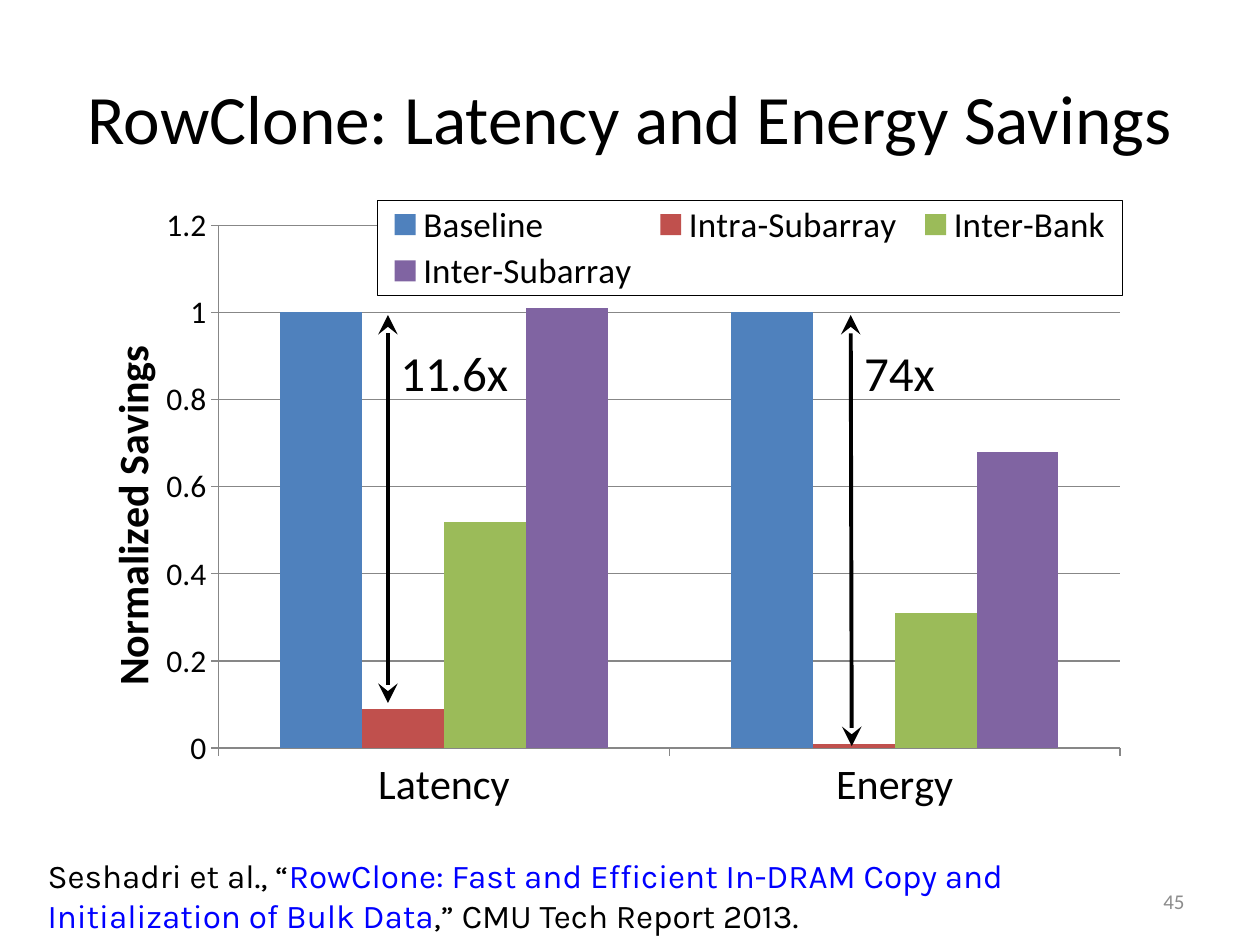
"""Build the RowClone latency and energy savings slide."""
from lxml import etree
from pptx import Presentation
from pptx.chart.data import CategoryChartData
from pptx.dml.color import RGBColor
from pptx.enum.chart import XL_CHART_TYPE, XL_LEGEND_POSITION, XL_TICK_MARK
from pptx.enum.shapes import MSO_CONNECTOR
from pptx.enum.text import MSO_ANCHOR, PP_ALIGN
from pptx.oxml import parse_xml
from pptx.oxml.ns import nsdecls, qn
from pptx.util import Cm, Pt

COLUMNS = XL_CHART_TYPE.COLUMN_CLUSTERED
RIGHT = XL_LEGEND_POSITION.RIGHT
OUTSIDE = XL_TICK_MARK.OUTSIDE
STRAIGHT = MSO_CONNECTOR.STRAIGHT
TOP, MIDDLE = MSO_ANCHOR.TOP, MSO_ANCHOR.MIDDLE
LEFT, CENTER, END = PP_ALIGN.LEFT, PP_ALIGN.CENTER, PP_ALIGN.RIGHT

COLORS = {
    "text": "000000", "link": "0000FF", "number": "8C8C8C", "grid": "878787",
    "Baseline": "4F81BD", "Intra-Subarray": "C0504D",
    "Inter-Bank": "9BBB59", "Inter-Subarray": "8064A2",
}
RGB = {name: RGBColor.from_string(value) for name, value in COLORS.items()}


def add_text(box, runs, size, font="Calibri", align=LEFT, anchor=TOP, wrap=True):
    """Add a text box whose runs are (text, colour name) pairs."""
    tf = s.shapes.add_textbox(*map(Cm, box)).text_frame
    tf.word_wrap, tf.vertical_anchor = wrap, anchor
    p = tf.paragraphs[0]
    p.alignment = align
    for text, color in runs:
        r = p.add_run()
        r.text = text
        r.font.color.rgb = RGB[color]
        for name, value in {"name": font, "size": Pt(size)}.items():
            setattr(r.font, name, value)


def layout_xml(target="", **fractions):
    """Return a manual chart layout placed by fractions of the chart."""
    inner = f'<c:layoutTarget val="{target}"/>' if target else ""
    inner += '<c:xMode val="edge"/><c:yMode val="edge"/>'
    inner += "".join(f'<c:{k} val="{v}"/>' for k, v in fractions.items())
    return parse_xml(f'<c:layout {nsdecls("c")}><c:manualLayout>{inner}'
                     '</c:manualLayout></c:layout>')


prs = Presentation()
prs.slide_width, prs.slide_height = Cm(25.4), Cm(19.05)
s = prs.slides.add_slide(prs.slide_layouts[6])

add_text((1.27, 0.76, 22.86, 3.18),
         [("RowClone: Latency and Energy Savings", "text")],
         39.6, align=CENTER, anchor=MIDDLE)

data = CategoryChartData()
data.categories = ["Latency", "Energy"]
savings = {
    "Baseline": (1, 1),
    "Intra-Subarray": (0.09, 0.01),
    "Inter-Bank": (0.52, 0.31),
    "Inter-Subarray": (1.01, 0.68),
}
for name, values in savings.items():
    data.add_series(name, values)
chart = s.shapes.add_chart(COLUMNS, Cm(1.27), Cm(4.01), Cm(22.43), Cm(13.34),
                           data).chart
chart.has_title = False
chart.font.name, chart.font.size = "Calibri", Pt(10)
chart.font.color.rgb = RGB["text"]

plot = chart.plots[0]
plot.gap_width, plot.overlap, plot.vary_by_categories = 150, 0, False
for series in plot.series:
    series.format.fill.solid()
    series.format.fill.fore_color.rgb = RGB[series.name]
plot_area = chart.element.find(".//" + qn("c:plotArea"))
for old in plot_area.findall(qn("c:layout")):
    plot_area.remove(old)
plot_area.insert(0, layout_xml("inner", x=0.14, y=0.04, w=0.81, h=0.79))

val_axis = chart.value_axis
val_format = {"minimum_scale": 0, "maximum_scale": 1.2, "major_unit": 0.2,
              "has_major_gridlines": True}
for name, value in val_format.items():
    setattr(val_axis, name, value)
for axis, size in ((chart.category_axis, 24), (val_axis, 18)):
    axis.major_tick_mark = OUTSIDE
    axis.tick_labels.font.size = Pt(size)
for line in (chart.category_axis.format.line, val_axis.format.line,
             val_axis.major_gridlines.format.line):
    line.width, line.color.rgb = Pt(0.75), RGB["grid"]

title = val_axis.axis_title
p = title.text_frame.paragraphs[0]
r = p.add_run()
r.text = "Normalized Savings"
title_format = {"name": "Calibri", "size": Pt(24), "bold": True}
for name, value in title_format.items():
    setattr(r.font, name, value)
r.font.color.rgb = RGB["text"]
body = title.text_frame._txBody.find(qn("a:bodyPr"))
body.set("rot", "-5400000")
body.set("vert", "horz")
for old in title._element.findall(qn("c:layout")):
    title._element.remove(old)
title._element.find(qn("c:tx")).addnext(layout_xml(x=0.03, y=0.21))

chart.has_legend = True
legend = chart.legend
legend.position, legend.include_in_layout = RIGHT, False
legend.font.size = Pt(20)
element = legend._element
for old in element.findall(qn("c:layout")):
    element.remove(old)
element.find(qn("c:legendPos")).addnext(
    layout_xml(x=0.283, y=0.002, w=0.669, h=0.144))
element.find(qn("c:overlay")).addnext(parse_xml(
    f'<c:spPr {nsdecls("c", "a")}>'
    '<a:solidFill><a:srgbClr val="FFFFFF"/></a:solidFill><a:ln w="9525">'
    f'<a:solidFill><a:srgbClr val="{COLORS["text"]}"/></a:solidFill>'
    '</a:ln></c:spPr>'))

gains = (("11.6x", 7.82, 7.82, 14.17, 2.72), ("74x", 17.15, 17.17, 15.04, 1.96))
for label, x1, x2, bottom, width in gains:
    sp = s.shapes.add_connector(STRAIGHT, Cm(x1), Cm(6.35), Cm(x2), Cm(bottom))
    sp.line.width, sp.line.color.rgb = Pt(2.25), RGB["text"]
    ln = sp.line._get_or_add_ln()
    for end in ("a:headEnd", "a:tailEnd"):
        etree.SubElement(ln, qn(end), type="stealth", w="lg", len="lg")
    etree.SubElement(sp._element.spPr, qn("a:effectLst"))
    add_text((x2, 6.78, width, 1.45), [(label, "text")], 28, wrap=False)

add_text((18.21, 17.65, 5.92, 1.02), [("45", "number")], 12,
         align=END, anchor=MIDDLE)
add_text((0.71, 17.12, 21.79, 1.88),
         [("Seshadri et al., “", "text"),
          ("RowClone: Fast and Efficient In-DRAM Copy and "
           "Initialization of Bulk Data", "link"),
          (",” CMU Tech Report 2013.", "text")], 19, font="Karla")

prs.save("out.pptx")
